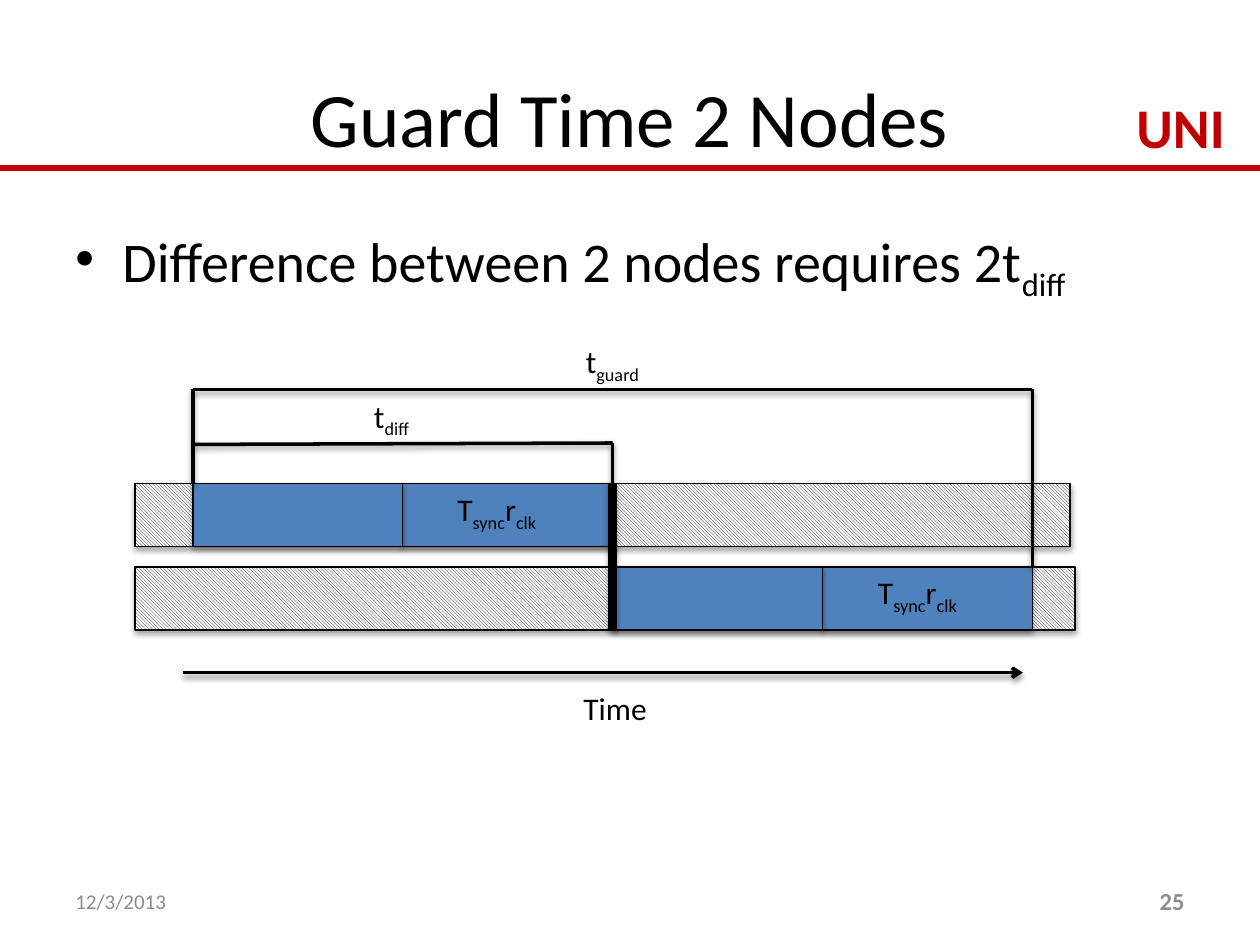
"""Build the slide on guard time between two nodes."""
from dataclasses import dataclass
from lxml.etree import SubElement
from pptx import Presentation
from pptx.dml.color import RGBColor
from pptx.enum.dml import MSO_PATTERN
from pptx.enum.shapes import MSO_CONNECTOR, MSO_SHAPE
from pptx.enum.text import MSO_ANCHOR, PP_ALIGN
from pptx.oxml.ns import qn
from pptx.util import Cm, Pt


@dataclass(frozen=True)
class Theme:
    font: str = "Calibri"
    black: str = "000000"
    white: str = "FFFFFF"
    red: str = "C00000"
    gray: str = "8C8C8C"
    blue: str = "4F81BD"
    title: int = 44
    body: int = 32
    label: int = 18
    page: int = 14
    date: int = 12
    thin: float = 0.75
    line: float = 2
    rule: float = 3.25
    thick: float = 5


T = Theme()
LEFT, START, SLOT = 2.72, 3.89, 4.23
MID, END = START + 2 * SLOT, START + 4 * SLOT
HIGH, TOP, LOW = 1.27, 9.75, 11.43
GUARD, DIFF, AXIS = 7.85, 8.93, 13.56

CLOCK = [("T", 0), ("sync", 1), ("r", 0), ("clk", 1)]
ROWS = [(LOW, 18.95, (3, 2)), (TOP, 18.85, (1, 0))]
LABELS = [
    ((17.45, LOW, 2.29), CLOCK),
    ((8.97, TOP, 2.29), CLOCK),
    ((11.51, 13.77, 1.8), [("Time", 0)]),
    ((11.56, 6.78, 1.73), [("t", 0), ("guard", 1)]),
    ((7.29, 7.87, 1.3), [("t", 0), ("diff", 1)]),
]
LINES = [
    (START, TOP, START, GUARD, T.line),
    (END, GUARD, START, GUARD, T.line),
    (END, LOW, END, GUARD, T.line),
    (MID, TOP, MID, DIFF, T.line),
    (MID, DIFF, START, DIFF + 0.03, T.line),
    (MID, LOW + HIGH, MID, TOP, T.thick),
]
POINT = [("Difference between 2 nodes requires 2t", 0), ("diff", 1)]


def shade(props, alpha):
    fx = SubElement(props, qn("a:effectLst"))
    if alpha:
        out = SubElement(fx, qn("a:outerShdw"), blurRad="40000", dist="23000",
                         dir="5400000", rotWithShape="0")
        tone = SubElement(out, qn("a:srgbClr"), val=T.black)
        SubElement(tone, qn("a:alpha"), val=str(alpha * 1000))


def write(slide, box, runs, size, color=T.black, bold=False,
          align=PP_ALIGN.LEFT, anchor=MSO_ANCHOR.TOP, wrap=True):
    frame = slide.shapes.add_textbox(*map(Cm, box)).text_frame
    frame.word_wrap = wrap
    frame.vertical_anchor = anchor
    para = frame.paragraphs[0]
    para.alignment = align
    font = para.font
    font.name, font.size, font.bold = T.font, Pt(size), bold
    font.color.rgb = RGBColor.from_string(color)
    for text, sub in runs:
        run = para.add_run()
        run.text = text
        if sub:
            run._r.get_or_add_rPr().set("baseline", "-25000")
    return para


def block(slide, left, top, width, color=None):
    bar = slide.shapes.add_shape(MSO_SHAPE.RECTANGLE,
                                 *map(Cm, (left, top, width, HIGH)))
    if color:
        bar.fill.solid()
        bar.fill.fore_color.rgb = RGBColor.from_string(color)
    else:
        bar.fill.patterned()
        bar.fill.pattern = MSO_PATTERN.LIGHT_DOWNWARD_DIAGONAL
        bar.fill.fore_color.rgb = RGBColor.from_string(T.black)
        bar.fill.back_color.rgb = RGBColor.from_string(T.white)
    bar.line.color.rgb = RGBColor.from_string(T.black)
    bar.line.width = Pt(T.thin)
    shade(bar._element.spPr, 35)


def stroke(slide, ends, width, color=T.black, alpha=38, arrow=False):
    link = slide.shapes.add_connector(MSO_CONNECTOR.STRAIGHT, *map(Cm, ends))
    link.line.color.rgb = RGBColor.from_string(color)
    link.line.width = Pt(width)
    if arrow:
        SubElement(link.line._get_or_add_ln(), qn("a:tailEnd"), type="arrow")
    shade(link._element.spPr, alpha)


def main():
    deck = Presentation()
    deck.slide_width, deck.slide_height = Cm(25.4), Cm(19.05)
    slide = deck.slides.add_slide(deck.slide_layouts[6])

    write(slide, (22.66, 1.75, 2.46, 1.63), [("UNI", 0)], T.body, T.red,
          bold=True, wrap=False)
    stroke(slide, (0, 3.38, 25.4, 3.38), T.rule, T.red, alpha=0)
    write(slide, (1.27, 0.76, 22.86, 3.18), [("Guard Time 2 Nodes", 0)],
          T.title, align=PP_ALIGN.CENTER, anchor=MSO_ANCHOR.MIDDLE)
    write(slide, (1.27, 17.65, 5.92, 1.02), [("12/3/2013", 0)], T.date, T.gray,
          anchor=MSO_ANCHOR.MIDDLE)
    write(slide, (18.21, 17.65, 5.92, 1.02), [("25", 0)], T.page, T.gray,
          bold=True, align=PP_ALIGN.RIGHT, anchor=MSO_ANCHOR.MIDDLE)

    for top, width, slots in ROWS:
        block(slide, LEFT, top, width)
        for slot in slots:
            block(slide, START + slot * SLOT, top, SLOT, T.blue)
    for (left, top, width), runs in LABELS:
        write(slide, (left, top, width, 1.02), runs, T.label, wrap=False)
    for *ends, width in LINES:
        stroke(slide, ends, width)
    stroke(slide, (3.68, AXIS, 20.62, AXIS), T.line, arrow=True)

    point = write(slide, (1.27, 4.45, 22.86, 1.9), POINT, T.body)
    point.space_before = Pt(6.4)
    props = point._p.get_or_add_pPr()
    props.set("marL", str(Cm(0.95)))
    props.set("indent", str(-Cm(0.95)))
    mark = props.makeelement(qn("a:buChar"), {"char": "•"})
    props.find(qn("a:defRPr")).addprevious(mark)

    deck.save("out.pptx")


if __name__ == "__main__":
    main()
